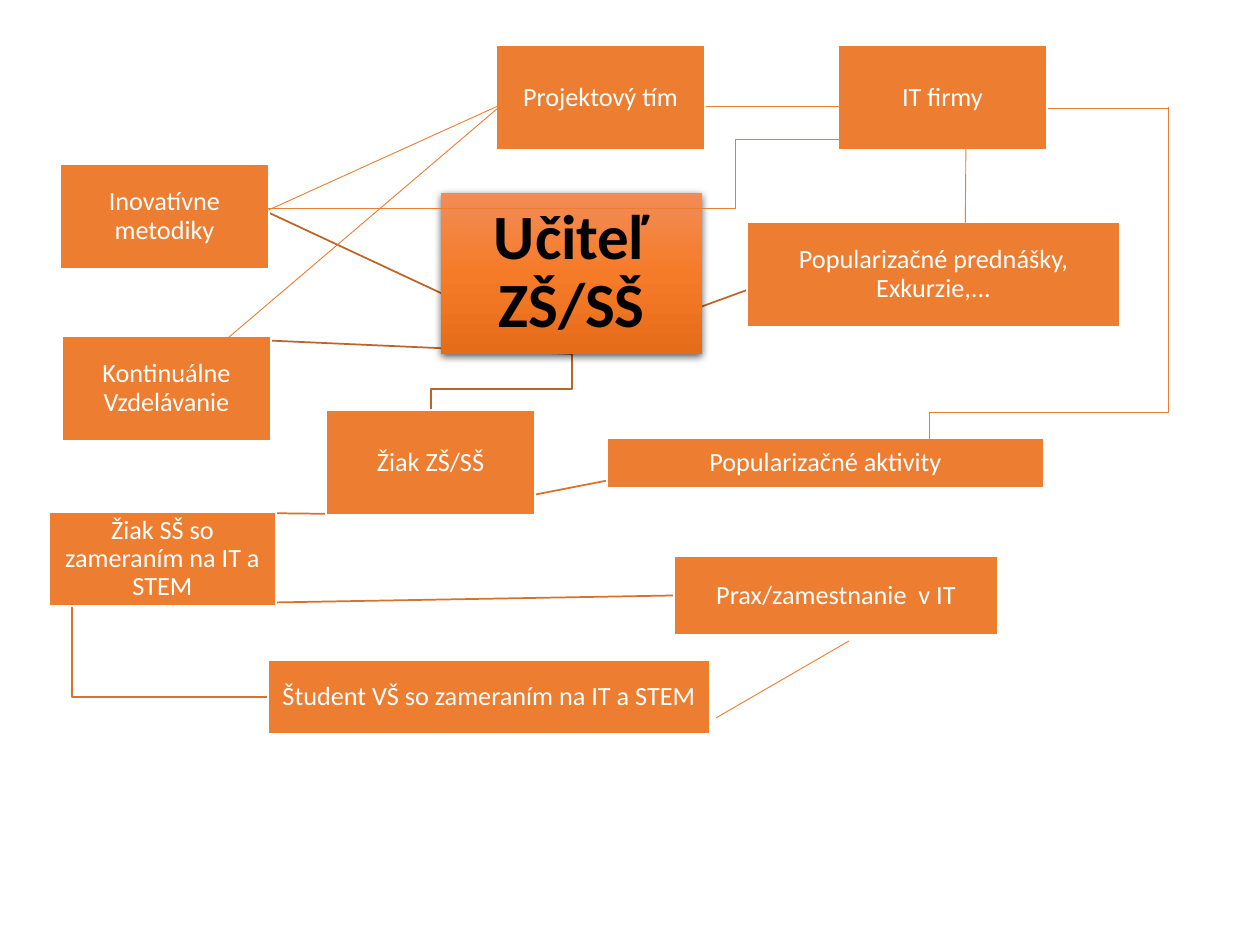
from copy import deepcopy

from lxml.etree import SubElement
from pptx import Presentation
from pptx.dml.color import RGBColor
from pptx.enum.shapes import MSO_CONNECTOR, MSO_SHAPE
from pptx.enum.text import MSO_ANCHOR, PP_ALIGN
from pptx.oxml.ns import qn
from pptx.util import Emu, Pt

PIXELS_PER_INCH = 126
ORANGE, BROWN, RUST, WHITE = "ED7D31", "BE6427", "D7712C", "FFFFFF"
TOP, LEFT, BOTTOM = 0, 1, 2

# Topic boxes: text and left, top, width, height
TOPICS = {
    "methods": ("Inovatívne metodiky", (60, 164, 209, 105)),
    "lectures": ("Popularizačné prednášky, Exkurzie,...", (747, 222, 373, 105)),
    "pupil": ("Žiak ZŠ/SŠ", (326, 410, 209, 105)),
    "it_pupil": ("Žiak SŠ so zameraním na IT a STEM", (49, 512, 227, 94)),
    "student": ("Študent VŠ so zameraním na IT a STEM", (268, 660, 442, 74)),
    "job": ("Prax/zamestnanie  v IT", (674, 556, 324, 79)),
    "activities": ("Popularizačné aktivity", (607, 438, 437, 50)),
    "education": ("Kontinuálne Vzdelávanie", (62, 336, 209, 105)),
    "team": ("Projektový tím", (496, 45, 209, 105)),
    "companies": ("IT firmy", (838, 45, 209, 105)),
}
TEACHER_BOX = (441, 193, 261, 161)

# Parent, child and colour of the straight hierarchy lines
HIERARCHY = [
    ("teacher", "education", BROWN),
    ("teacher", "lectures", BROWN),
    ("teacher", "methods", BROWN),
    ("pupil", "activities", RUST),
    ("pupil", "it_pupil", RUST),
]

# Thin cross links: start x, y and end x, y
CROSS_LINKS = [
    (1048, 108, 1169, 108),
    (966, 139, 965, 260),
    (849, 106, 706, 106),
    (498, 106, 262, 213),
    (716, 718, 849, 641),
    (498, 108, 181, 378),
]


def px(value):
    return Emu(round(value * 914400 / PIXELS_PER_INCH))


def color(hex_string):
    return RGBColor.from_string(hex_string)


def write_text(shape, text, size=15, text_color=WHITE, bold=False, inset=1):
    frame = shape.text_frame
    frame.word_wrap = True
    frame.vertical_anchor = MSO_ANCHOR.MIDDLE
    frame.margin_left = frame.margin_right = px(inset)
    frame.margin_top = frame.margin_bottom = px(inset)
    paragraph = frame.paragraphs[0]
    paragraph.text = text
    paragraph.alignment = PP_ALIGN.CENTER
    paragraph.line_spacing = 0.9
    font = paragraph.font
    font.name, font.size, font.bold = "Calibri", Pt(size), bold
    font.color.rgb = color(text_color)


def add_box(slide, box):
    shape = slide.shapes.add_shape(MSO_SHAPE.RECTANGLE, *map(px, box))
    shape.shadow.inherit = False
    return shape


def add_topic(slide, text, box):
    shape = add_box(slide, box)
    shape.fill.solid()
    shape.fill.fore_color.rgb = color(ORANGE)
    shape.line.color.rgb = color(WHITE)
    shape.line.width = Pt(1)
    write_text(shape, text)
    return shape


def add_teacher(slide, box):
    shape = add_box(slide, box)
    shape.line.fill.background()
    # Three-stop vertical gradient
    shape.fill.gradient()
    shape.fill.gradient_angle = 270
    stop_list = shape._element.spPr.find(".//" + qn("a:gsLst"))
    stop_list.insert(1, deepcopy(stop_list[0]))
    gradient = ((0, "F18C57"), (0.5, "F67B28"), (1, "E56C19"))
    for stop, (position, stop_color) in zip(shape.fill.gradient_stops, gradient):
        stop.position = position
        stop.color.rgb = color(stop_color)
    # Soft shadow below
    effects = shape._element.spPr.find(qn("a:effectLst"))
    shadow = SubElement(effects, qn("a:outerShdw"), blurRad=str(Pt(4.5)),
                        dist=str(Pt(1.5)), dir="5400000", rotWithShape="0")
    shadow_color = SubElement(shadow, qn("a:srgbClr"), val="000000")
    SubElement(shadow_color, qn("a:alpha"), val="63000")
    write_text(shape, "Učiteľ ZŠ/SŠ", size=36, text_color="000000", bold=True, inset=4)
    return shape


def add_line(slide, points, line_color=ORANGE, width=0.5, kind=MSO_CONNECTOR.STRAIGHT):
    connector = slide.shapes.add_connector(kind, *map(px, points))
    connector.line.color.rgb = color(line_color)
    connector.line.width = Pt(width)
    SubElement(connector._element.spPr, qn("a:effectLst"))
    return connector


def add_elbow(slide, points, bend, **line_format):
    connector = add_line(slide, points, kind=MSO_CONNECTOR.ELBOW, **line_format)
    geometry = connector._element.spPr.find(qn("a:prstGeom"))
    guides = geometry.get_or_add_avLst()
    SubElement(guides, qn("a:gd"), name="adj1", fmla=f"val {round(bend * 100000)}")
    return connector


def add_falling_elbow(slide, points, bend, **line_format):
    """Elbow that leaves downwards and ends lower left: a quarter-turned one."""
    start_x, start_y, end_x, end_y = points
    center_x, center_y = (start_x + end_x) / 2, (start_y + end_y) / 2
    half_width, half_height = (end_y - start_y) / 2, (start_x - end_x) / 2
    turned = (center_x - half_width, center_y - half_height,
              center_x + half_width, center_y + half_height)
    connector = add_elbow(slide, turned, bend, **line_format)
    connector._element.spPr.find(qn("a:xfrm")).set("rot", "5400000")
    return connector


def add_corner(slide, points, line_color):
    builder = slide.shapes.build_freeform(px(points[0][0]), px(points[0][1]))
    builder.add_line_segments([(px(x), px(y)) for x, y in points[1:]], close=False)
    shape = builder.convert_to_shape()
    shape.shadow.inherit = False
    shape.fill.background()
    shape.line.color.rgb = color(line_color)
    shape.line.width = Pt(1)
    return shape


def add_hierarchy(slide, boxes):
    lines = []
    for parent, child, line_color in HIERARCHY:
        line = add_line(slide, (0, 0, 1, 1), line_color, width=1)
        line.begin_connect(boxes[parent], BOTTOM)
        line.end_connect(boxes[child], TOP)
        lines.append(line)
    job_line = add_line(slide, (72, 606, 674, 596), RUST, width=1)
    job_line.end_connect(boxes["job"], LEFT)
    lines.append(job_line)
    lines.append(add_corner(slide, [(72, 606), (72, 697), (268, 697)], RUST))
    lines.append(add_falling_elbow(slide, (572, 354, 431, 410), 0.62,
                                   line_color=BROWN, width=1))
    # Lines lie behind the boxes
    for line in lines:
        slide.shapes._spTree.insert(2, line._element)


def add_cross_links(slide):
    add_falling_elbow(slide, (1168, 107, 929, 484), 0.81)
    for points in CROSS_LINKS:
        add_line(slide, points)
    add_elbow(slide, (850, 139, 261, 208), 0.195)


def main():
    presentation = Presentation()
    presentation.slide_width, presentation.slide_height = px(1260), px(945)
    slide = presentation.slides.add_slide(presentation.slide_layouts[6])
    boxes = {"teacher": add_teacher(slide, TEACHER_BOX)}
    for name, (text, box) in TOPICS.items():
        boxes[name] = add_topic(slide, text, box)
    add_hierarchy(slide, boxes)
    add_cross_links(slide)
    presentation.save("out.pptx")


if __name__ == "__main__":
    main()
